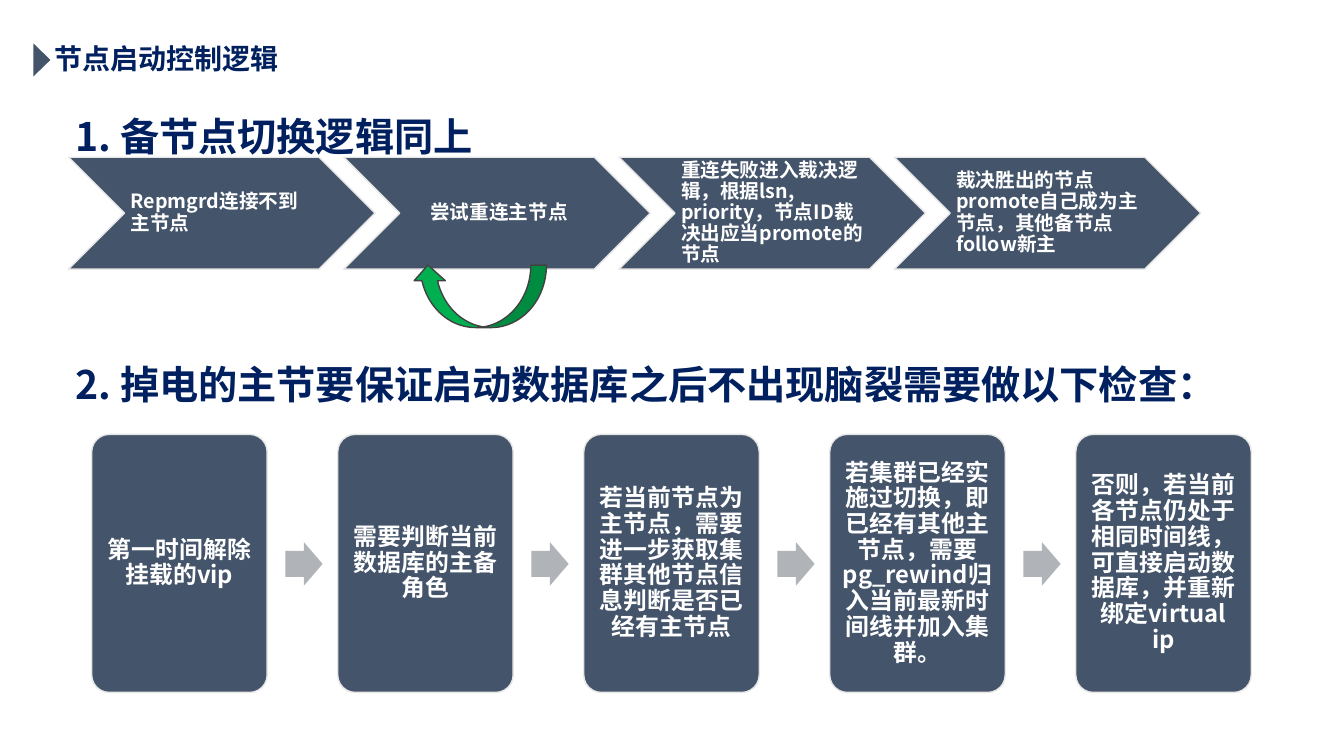
from lxml import etree
from pptx import Presentation
from pptx.dml.color import RGBColor
from pptx.enum import shapes, text
from pptx.oxml.ns import qn
from pptx.util import Inches, Pt

FONT = "Noto Sans CJK SC"
NAVY = RGBColor(0x00, 0x20, 0x60)
SLATE = RGBColor(0x44, 0x54, 0x6A)
PALE = RGBColor(0xE7, 0xE6, 0xE6)
GREY = RGBColor(0xB0, 0xB4, 0xB9)
GREEN = RGBColor(0x00, 0xB0, 0x50)
DARK = RGBColor(0x42, 0x42, 0x42)
WHITE = RGBColor(0xFF, 0xFF, 0xFF)
MSO = shapes.MSO_SHAPE
LEFT, CENTER = text.PP_ALIGN.LEFT, text.PP_ALIGN.CENTER

prs = Presentation()
prs.slide_width, prs.slide_height = Inches(13.33), Inches(7.5)
s = prs.slides.add_slide(prs.slide_layouts[6])


def add_shape(kind, box, fill, line=None):
    sp = s.shapes.add_shape(kind, *map(Inches, box))
    sp.shadow.inherit = False
    sp.fill.solid()
    sp.fill.fore_color.rgb = fill
    if line is None:
        sp.line.fill.background()
    else:
        sp.line.color.rgb = line
        sp.line.width = Pt(1)
    return sp


def write(sp, words, size, color, align=LEFT, spacing=None, **frame):
    """Put one bold paragraph in a shape; frame holds text frame settings."""
    tf = sp.text_frame
    for name, value in frame.items():
        setattr(tf, name, value)
    p = tf.paragraphs[0]
    p.alignment, p.line_spacing = align, spacing
    r = p.add_run()
    r.text = words
    for name, value in {"name": FONT, "size": Pt(size), "bold": True}.items():
        setattr(r.font, name, value)
    r.font.color.rgb = color
    etree.SubElement(r.font._element, qn("a:ea"), typeface=FONT)


# Title and section headings
marker = add_shape(MSO.ISOSCELES_TRIANGLE, (0.25, 0.51, 0.33, 0.17), SLATE)
marker.rotation = 90
headings = [
    ("节点启动控制逻辑", (0.44, 0.36, 2.45, 0.44), 20, False),
    ("1. 备节点切换逻辑同上", (0.65, 1.07, 11.26, 0.57), 28, True),
    ("2. 掉电的主节要保证启动数据库之后不出现脑裂需要做以下检查：",
     (0.65, 3.53, 11.26, 0.57), 28, True),
]
for words, box, size, wrap in headings:
    write(s.shapes.add_textbox(*map(Inches, box)), words, size, NAVY,
          word_wrap=wrap, auto_size=text.MSO_AUTO_SIZE.SHAPE_TO_FIT_TEXT)

# Standby switchover steps
steps = [
    ("Repmgrd连接不到主节点", LEFT),
    ("尝试重连主节点", CENTER),
    ("重连失败进入裁决逻辑，根据lsn, priority，节点ID裁决出应当promote的节点", LEFT),
    ("裁决胜出的节点promote自己成为主节点，其他备节点follow新主", LEFT),
]
small = Inches(0.02)
for i, (words, align) in enumerate(steps):
    step = add_shape(MSO.CHEVRON, (0.68 + 2.73 * i, 1.56, 3.04, 1.11), SLATE, PALE)
    write(step, words, 14, WHITE, align, 0.9, word_wrap=True,
          vertical_anchor=text.MSO_ANCHOR.MIDDLE, margin_left=Inches(0.06),
          margin_right=small, margin_top=small, margin_bottom=small)

retry = add_shape(MSO.CURVED_UP_ARROW, (4.09, 2.63, 1.33, 0.62), GREEN, DARK)
retry._element.spPr.find(qn("a:xfrm")).set("flipH", "1")

# Checks before the failed primary starts again
checks = [
    "第一时间解除挂载的vip",
    "需要判断当前数据库的主备角色",
    "若当前节点为主节点，需要进一步获取集群其他节点信息判断是否已经有主节点",
    "若集群已经实施过切换，即已经有其他主节点，需要pg_rewind归入当前最新时间线并加入集群。",
    "否则，若当前各节点仍处于相同时间线，可直接启动数据库，并重新绑定virtual ip",
]
pad = Inches(0.07)
for i, words in enumerate(checks):
    x = 0.91 + 2.44 * i
    card = add_shape(MSO.ROUNDED_RECTANGLE, (x, 4.31, 1.74, 2.56), SLATE, PALE)
    card.adjustments[0] = 0.1
    write(card, words, 17, WHITE, CENTER, 0.9, word_wrap=True,
          vertical_anchor=text.MSO_ANCHOR.MIDDLE, margin_left=pad,
          margin_right=pad, margin_top=pad, margin_bottom=pad)
    if i < len(checks) - 1:
        arrow = add_shape(MSO.RIGHT_ARROW, (x + 1.92, 5.38, 0.37, 0.43), GREY)
        arrow.adjustments[0] = 0.6

prs.save("out.pptx")
